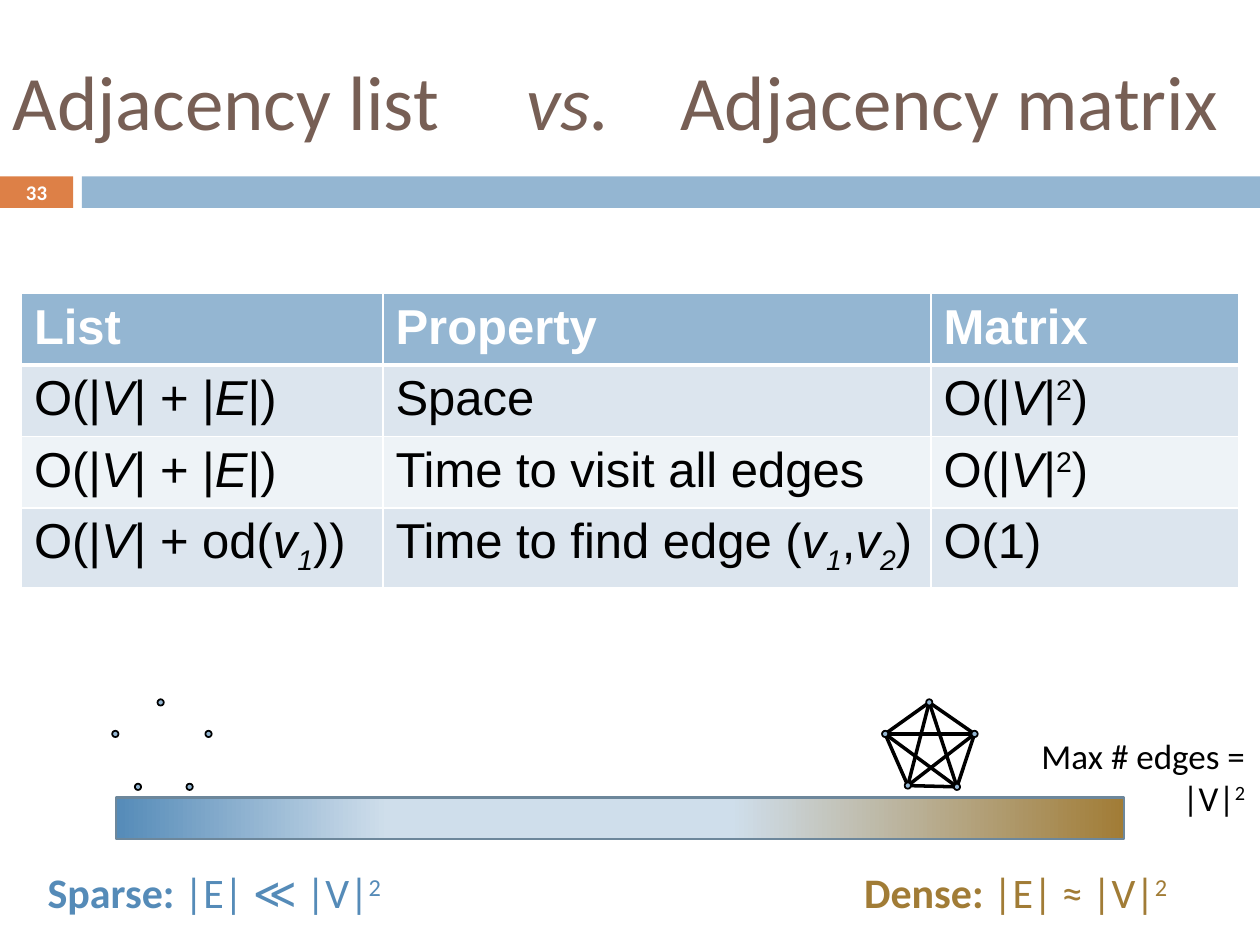
from itertools import combinations
from lxml import etree
from pptx import Presentation
from pptx.dml.color import RGBColor
from pptx.enum import shapes, text
from pptx.oxml import parse_xml
from pptx.oxml.ns import qn
from pptx.util import Inches, Pt

HUES = {"blue": "94B6D2", "orange": "DD8047", "brown": "775F55", "white": "FFFFFF",
        "black": "000000", "band": "DCE5EE", "pale": "EEF3F7", "sparse": "558BB8",
        "dense": "A17C36", "mid": "CFDEEB", "edge": "6D879B"}

TITLE = [("Adjacency list\t", ""), ("vs.", "i"), ("\tAdjacency matrix", "")]
TABS = [4.08, 5.3]
SUM = [("O(|", ""), ("V", "i"), ("| + |", ""), ("E", "i"), ("|)", "")]
SQUARE = [("O(|", ""), ("V", "i"), ("|", ""), ("2", "^"), (")", "")]
ROWS = [
    [[("List", "b")], [("Property", "b")], [("Matrix", "b")]],
    [SUM, [("Space", "")], SQUARE],
    [SUM, [("Time to visit all edges", "")], SQUARE],
    [[("O(|", ""), ("V", "i"), ("| + od(", ""), ("v", "i"), ("1", "i_"), ("))", "")],
     [("Time to find edge (", ""), ("v", "i"), ("1", "i_"), (",", ""),
      ("v", "i"), ("2", "i_"), (")", "")],
     [("O(1)", "")]],
]
FILLS = ["blue", "band", "pale", "band"]
COLS = [2.87, 4.35, 2.44]
LABELS = [
    (0.28, 2.97, "sparse", [("Sparse: ", "b"), ("|E| ≪ |V|", ""), ("2", "^")]),
    (6.76, 2.83, "dense", [("Dense: ", "b"), ("|E| ≈ |V|", ""), ("2", "^")]),
]
LIMIT = [("Max # edges = |V|", ""), ("2", "^")]
STOPS = [(0, "dense"), (39, "mid"), (73, "mid"), (100, "sparse")]
DOT = 0.05
FULL = [(7, 5.8), (7.35, 5.55), (7.71, 5.8), (7.57, 6.22), (7.18, 6.21)]
LOOSE = [(0.89, 5.8), (1.25, 5.55), (1.63, 5.8), (1.48, 6.22), (1.07, 6.22)]


def rgb(hue):
    return RGBColor.from_string(HUES[hue])


def write(frame, runs, size, hue, font="Calibri", align=text.PP_ALIGN.LEFT):
    para = frame.paragraphs[0]
    para.alignment = align
    for words, style in runs:
        run = para.add_run()
        run.text = words
        face = run.font
        face.name, face.size = font, Pt(size)
        face.bold, face.italic = "b" in style, "i" in style
        face.color.rgb = rgb(hue)
        shift = 30000 if "^" in style else -25000 if "_" in style else 0
        if shift:
            run._r.get_or_add_rPr().set("baseline", str(shift))
    return para


def label(slide, box, runs, size, hue, wrap=True, align=text.PP_ALIGN.LEFT):
    frame = slide.shapes.add_textbox(*map(Inches, box)).text_frame
    frame.word_wrap = wrap
    write(frame, runs, size, hue, align=align)
    return frame


def block(slide, kind, box, hue, line=None, width=1):
    item = slide.shapes.add_shape(kind, *map(Inches, box))
    item.shadow.inherit = False
    item.fill.solid()
    item.fill.fore_color.rgb = rgb(hue)
    if line:
        item.line.color.rgb = rgb(line)
        item.line.width = Pt(width)
    else:
        item.line.fill.background()
    return item


def blend(item):
    item.fill.gradient()
    grad = item._element.spPr.find(qn("a:gradFill"))
    stops = grad.find(qn("a:gsLst"))
    for old in list(stops):
        stops.remove(old)
    for place, hue in STOPS:
        stop = etree.SubElement(stops, qn("a:gs"), pos=str(place * 1000))
        etree.SubElement(stop, qn("a:srgbClr"), val=HUES[hue])
    grad.find(qn("a:lin")).set("ang", "10800000")


def border(cell, head):
    props = cell._tc.get_or_add_tcPr()
    for spot, side in enumerate(("lnL", "lnR", "lnT", "lnB")):
        width = Pt(3 if head and side == "lnB" else 1)
        line = parse_xml(
            f'<a:{side} xmlns:a="http://schemas.openxmlformats.org/drawingml/2006/main" '
            f'w="{width}"><a:solidFill><a:srgbClr val="{HUES["white"]}"/>'
            f'</a:solidFill></a:{side}>')
        props.insert(spot, line)


def grid(slide):
    box = map(Inches, (0.17, 2.33, sum(COLS), 2.12))
    table = slide.shapes.add_table(len(ROWS), len(COLS), *box).table
    for col, width in zip(table.columns, COLS):
        col.width = Inches(width)
    for r, row in enumerate(ROWS):
        for c, runs in enumerate(row):
            cell = table.cell(r, c)
            cell.fill.solid()
            cell.fill.fore_color.rgb = rgb(FILLS[r])
            border(cell, r == 0)
            write(cell.text_frame, runs, 28, "black" if r else "white", "Arial")


def graph(slide, dots, linked):
    half = DOT / 2
    for start, end in combinations(dots, 2) if linked else ():
        ends = [Inches(v + half) for v in start + end]
        edge = slide.shapes.add_connector(shapes.MSO_CONNECTOR.STRAIGHT, *ends)
        edge.line.color.rgb = rgb("black")
        edge.line.width = Pt(2)
        etree.SubElement(edge._element.spPr, qn("a:effectLst"))
    for x, y in dots:
        block(slide, shapes.MSO_SHAPE.OVAL, (x, y, DOT, DOT), "blue", "black")


def main():
    deck = Presentation()
    deck.slide_width, deck.slide_height = Inches(10), Inches(7.5)
    slide = deck.slides.add_slide(deck.slide_layouts[5])
    rect = shapes.MSO_SHAPE.RECTANGLE

    title = slide.shapes.title
    title.left, title.top, title.width, title.height = map(Inches, (0, 0.25, 10, 1.08))
    title.text_frame.vertical_anchor = text.MSO_ANCHOR.MIDDLE
    para = write(title.text_frame, TITLE, 44, "brown")
    tabs = etree.SubElement(para._p.get_or_add_pPr(), qn("a:tabLst"))
    for stop in TABS:
        etree.SubElement(tabs, qn("a:tab"), pos=str(Inches(stop)), algn="l")

    block(slide, rect, (0, 1.4, 0.58, 0.25), "orange")
    block(slide, rect, (0.65, 1.4, 9.35, 0.25), "blue")
    page = label(slide, (0, 1.39, 0.58, 0.27), [("33", "b")], 11.9, "white",
                 align=text.PP_ALIGN.CENTER)
    page.vertical_anchor = text.MSO_ANCHOR.MIDDLE
    page.margin_top = page.margin_bottom = 0

    grid(slide)
    blend(block(slide, rect, (0.92, 6.33, 8, 0.33), "mid", "edge", 1.5))
    for left, width, hue, runs in LABELS:
        label(slide, (left, 6.83, width, 0.5), runs, 24, hue, wrap=False)
    graph(slide, FULL, True)
    graph(slide, LOOSE, False)
    label(slide, (8.15, 5.78, 1.83, 0.77), LIMIT, 20, "black",
          align=text.PP_ALIGN.RIGHT)
    deck.save("out.pptx")


if __name__ == "__main__":
    main()
